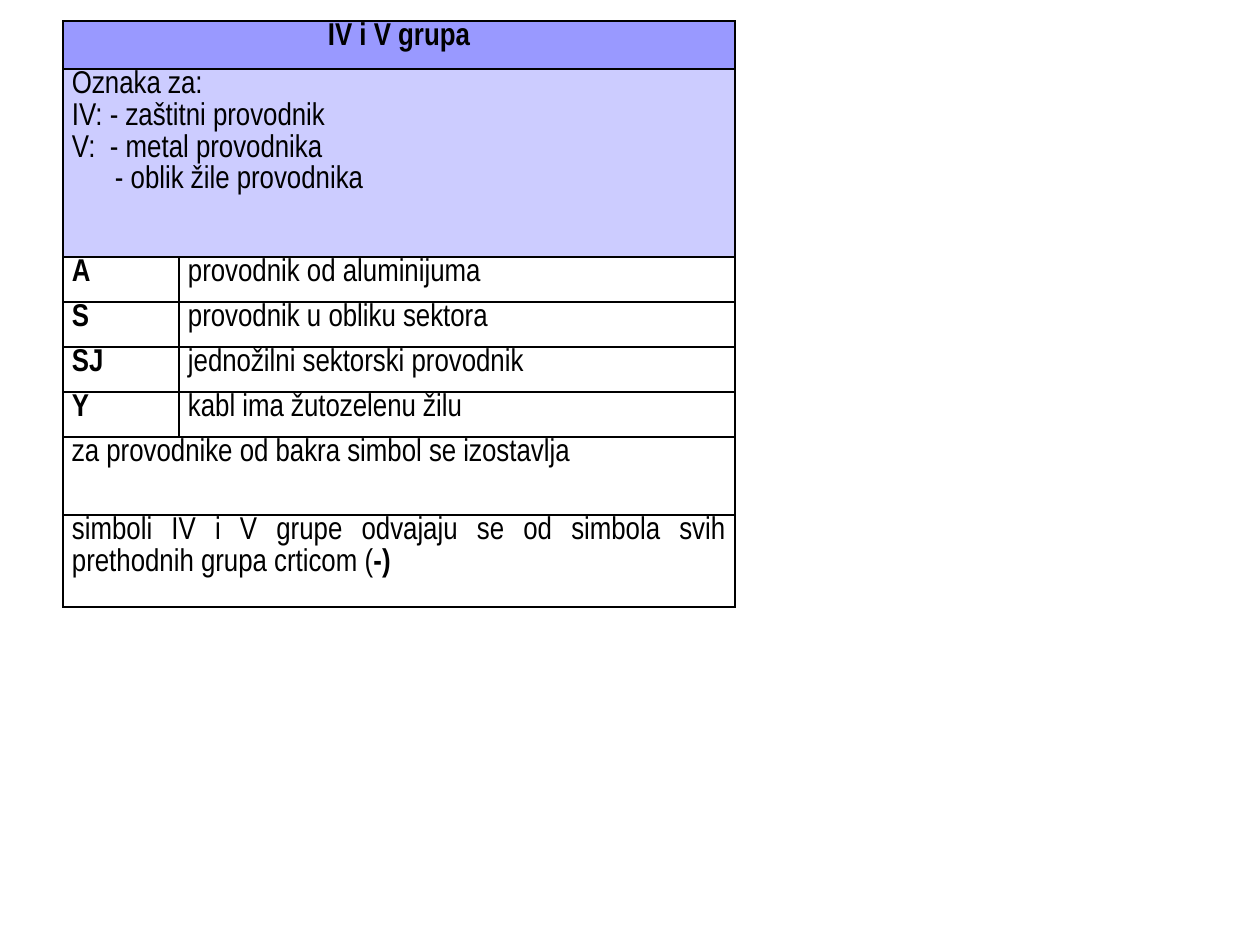
"""Build a slide with a table of cable marks for groups IV and V."""
from dataclasses import dataclass

from lxml import etree
from pptx import Presentation
from pptx.dml.color import RGBColor
from pptx.enum.text import PP_ALIGN
from pptx.oxml.ns import qn
from pptx.util import Pt

PX = 914400 // 126
LEFT, MID, FULL = PP_ALIGN.LEFT, PP_ALIGN.CENTER, PP_ALIGN.JUSTIFY


@dataclass(frozen=True)
class Theme:
    font: str = "Arial Narrow"
    size: int = 18
    space: float = 1.07
    rule: float = 1
    ink: str = "000000"
    head: str = "9999FF"
    intro: str = "CCCCFF"


THEME = Theme()
COLS = [116, 556]
ROWS = [48, 188, 45, 45, 45, 45, 78, 92]
MARKS = [
    ("A", "provodnik od aluminijuma"),
    ("S", "provodnik u obliku sektora"),
    ("SJ", "jednožilni sektorski provodnik"),
    ("Y", "kabl ima žutozelenu žilu"),
]
INTRO = [
    ("Oznaka za:", 0, 0),
    ("IV: - zaštitni provodnik", 0, 0),
    ("V:\t- metal provodnika", 38, -38),
    ("- oblik žile provodnika", 43, 0),
]


def px(count):
    """Turn whole pixels into EMU."""
    return count * PX


def add_grid(slide, left, top):
    """Add a plain table with the set columns and rows."""
    grid = slide.shapes.add_table(
        len(ROWS), len(COLS), px(left), px(top), px(sum(COLS)), px(sum(ROWS))
    ).table
    grid.first_row = grid.horz_banding = False
    for col, width in zip(grid.columns, COLS):
        col.width = px(width)
    for row, height in zip(grid.rows, ROWS):
        row.height = px(height)
    for cell in grid.iter_cells():
        frame_cell(cell)
    return grid


def frame_cell(cell):
    """Give a cell its margins, four borders and no fill."""
    cell.margin_left = cell.margin_right = px(9)
    cell.margin_top = cell.margin_bottom = 0
    props = cell._tc.get_or_add_tcPr()
    for side in ("lnL", "lnR", "lnT", "lnB"):
        line = etree.SubElement(props, qn(f"a:{side}"), w=str(Pt(THEME.rule)))
        fill = etree.SubElement(line, qn("a:solidFill"))
        etree.SubElement(fill, qn("a:srgbClr"), val=THEME.ink)
    cell.fill.background()


def paint(cell, color):
    """Fill a cell with one colour."""
    cell.fill.solid()
    cell.fill.fore_color.rgb = RGBColor.from_string(color)


def style(para, align, bold=False):
    """Set the type and alignment of a paragraph."""
    para.alignment = align
    para.line_spacing = THEME.space
    font = para.font
    font.name, font.size, font.bold = THEME.font, Pt(THEME.size), bold
    font.color.rgb = RGBColor.from_string(THEME.ink)


def write(cell, text, align=FULL, bold=False):
    """Write one paragraph into a cell and return it."""
    para = cell.text_frame.paragraphs[0]
    para.add_run().text = text
    style(para, align, bold)
    return para


def write_intro(cell):
    """Write the indented lines that explain the groups."""
    frame = cell.text_frame
    for index, (text, margin, indent) in enumerate(INTRO):
        para = frame.add_paragraph() if index else frame.paragraphs[0]
        para.text = text
        style(para, FULL)
        props = para._p.get_or_add_pPr()
        props.set("marL", str(px(margin)))
        props.set("indent", str(px(indent)))


def main():
    """Build and save the slide."""
    deck = Presentation()
    deck.slide_width, deck.slide_height = px(1260), px(945)
    slide = deck.slides.add_slide(deck.slide_layouts[6])
    grid = add_grid(slide, 63, 21)
    last = len(ROWS) - 1
    for row in (0, 1, last - 1, last):
        grid.cell(row, 0).merge(grid.cell(row, 1))
    paint(grid.cell(0, 0), THEME.head)
    paint(grid.cell(1, 0), THEME.intro)
    write(grid.cell(0, 0), "IV i V grupa", MID, True)
    write_intro(grid.cell(1, 0))
    for row, (mark, sense) in enumerate(MARKS, 2):
        write(grid.cell(row, 0), mark, bold=True)
        write(grid.cell(row, 1), sense, LEFT)
    write(grid.cell(last - 1, 0), "za provodnike od bakra simbol se izostavlja")
    note = write(
        grid.cell(last, 0),
        "simboli IV i V grupe odvajaju se od simbola svih prethodnih grupa crticom (",
    )
    dash = note.add_run()
    dash.text = "-)"
    dash.font.bold = True
    deck.save("out.pptx")


if __name__ == "__main__":
    main()
